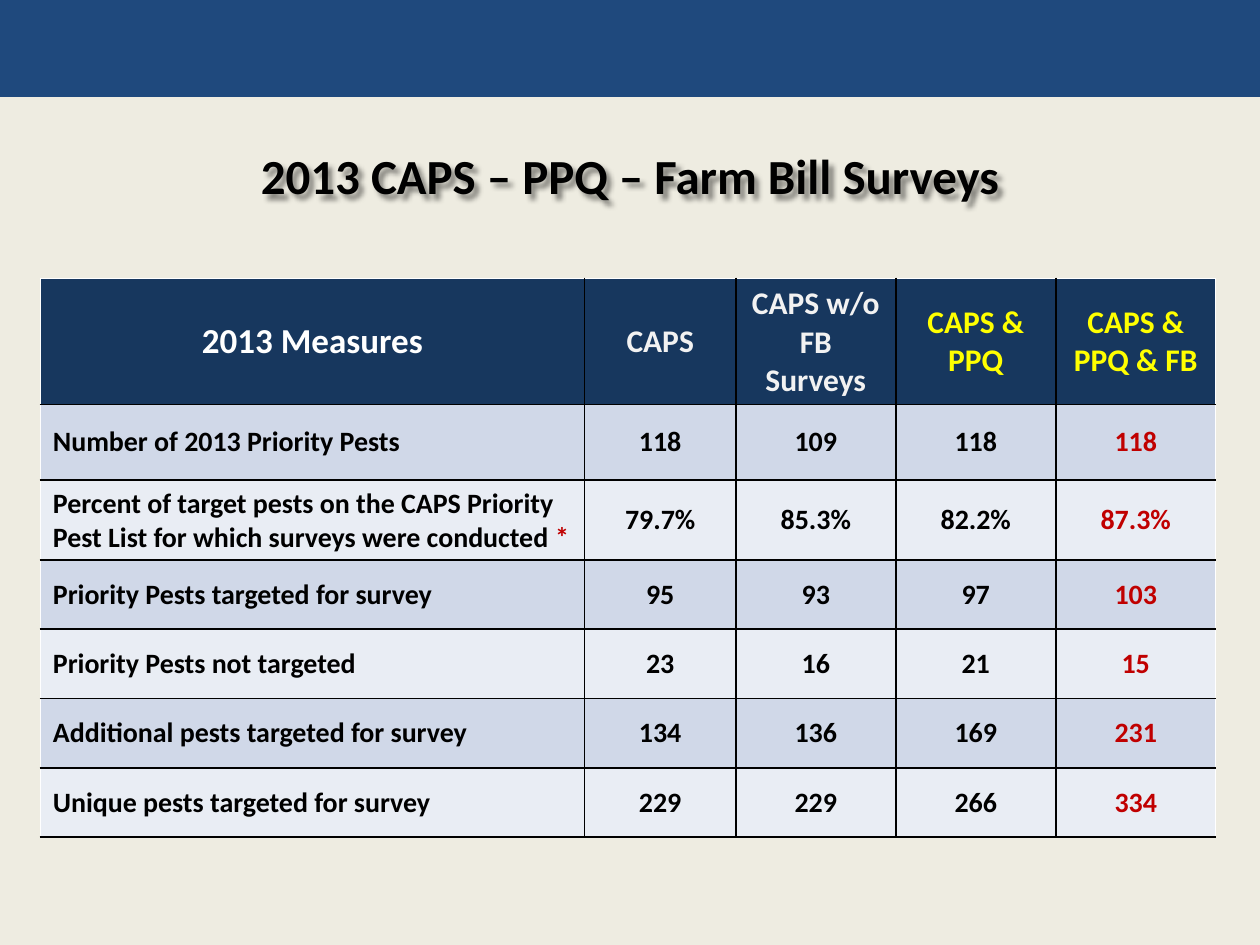
from lxml import etree
from pptx import Presentation
from pptx.dml.color import RGBColor
from pptx.enum.shapes import MSO_SHAPE
from pptx.enum.text import MSO_ANCHOR, PP_ALIGN
from pptx.oxml import parse_xml
from pptx.oxml.ns import nsdecls, qn
from pptx.util import Inches, Pt

RECTANGLE = MSO_SHAPE.RECTANGLE
MIDDLE = MSO_ANCHOR.MIDDLE
LEFT, CENTER = PP_ALIGN.LEFT, PP_ALIGN.CENTER

# Content
TITLE = "2013 CAPS – PPQ – Farm Bill Surveys"
HEADERS = ["2013 Measures", "CAPS", "CAPS w/o FB Surveys", "CAPS & PPQ", "CAPS & PPQ & FB"]
MEASURES = [
    ("Number of 2013 Priority Pests", "118", "109", "118", "118"),
    ("Percent of target pests on the CAPS Priority Pest List for which surveys were conducted *",
     "79.7%", "85.3%", "82.2%", "87.3%"),
    ("Priority Pests targeted for survey", "95", "93", "97", "103"),
    ("Priority Pests not targeted", "23", "16", "21", "15"),
    ("Additional pests targeted for survey", "134", "136", "169", "231"),
    ("Unique pests targeted for survey", "229", "229", "266", "334"),
]

# Style and grid, in inches
FONT = "Calibri"
BLACK, WHITE, RED = "000000", "FFFFFF", "C00000"
HEADER_FILL = "17375E"
HEADER_COLORS = [WHITE, "F2F2F2", "F2F2F2", "FFFF00", "FFFF00"]
BAND_FILLS = ["D0D8E8", "E9EDF4"]
WIDTH, HEIGHT = 10, 7.5
COLUMN_WIDTHS = [4.32, 1.2] + [1.27] * 3
ROW_HEIGHTS = [0.5, 0.6] + [0.55] * 5


def color(value):
    return RGBColor.from_string(value)


def style_font(font, size, value):
    font.name, font.size, font.bold = FONT, Pt(size), True
    font.color.rgb = color(value)


def set_borders(cell, **sides):
    properties = cell._tc.get_or_add_tcPr()
    for index, side in enumerate(("L", "R", "T", "B")):
        properties.insert(index, parse_xml(
            f'<a:ln{side} {nsdecls("a")} w="12700"><a:solidFill>'
            f'<a:srgbClr val="{sides.get(side, BLACK)}"/></a:solidFill></a:ln{side}>'))


def add_title(slide):
    box = slide.shapes.add_textbox(Inches(0.5), Inches(1), Inches(9), Inches(0.78))
    frame = box.text_frame
    frame.word_wrap = True
    frame.vertical_anchor = MIDDLE
    paragraph = frame.paragraphs[0]
    paragraph.text = TITLE
    paragraph.alignment = CENTER
    style_font(paragraph.font, 28, BLACK)
    # Soft shadow behind the letters
    effects = etree.SubElement(box._element.spPr, qn("a:effectLst"))
    effects.append(parse_xml(
        f'<a:outerShdw {nsdecls("a")} blurRad="38100" dist="38100" dir="2700000">'
        '<a:srgbClr val="000000"><a:alpha val="43000"/></a:srgbClr></a:outerShdw>'))


def fill_cell(cell, text, row, column):
    is_header, is_label = row == 0, column == 0
    last_column = len(HEADERS) - 1
    if is_header:
        fill, size, text_color = HEADER_FILL, 20 if is_label else 18, HEADER_COLORS[column]
    else:
        fill, size = BAND_FILLS[(row - 1) % 2], 16
        text_color = RED if column == last_column else BLACK
    cell.fill.solid()
    cell.fill.fore_color.rgb = color(fill)
    cell.vertical_anchor = MIDDLE
    if not is_header and not is_label:
        cell.margin_left = cell.margin_right = cell.margin_top = cell.margin_bottom = 0

    paragraph = cell.text_frame.paragraphs[0]
    paragraph.alignment = LEFT if is_label and not is_header else CENTER
    label, star, _ = text.partition("*")
    paragraph.add_run().text = label
    style_font(paragraph.font, size, text_color)
    if star:
        run = paragraph.add_run()
        run.text = star
        run.font.color.rgb = color(RED)

    set_borders(cell,
                L=WHITE if is_label else BLACK,
                R=WHITE if column == last_column else BLACK,
                T=WHITE if is_header else BLACK)


def add_measures_table(slide):
    rows = [HEADERS, *MEASURES]
    table = slide.shapes.add_table(
        len(rows), len(HEADERS), Inches(0.32), Inches(2.21),
        Inches(sum(COLUMN_WIDTHS)), Inches(sum(ROW_HEIGHTS))).table
    for column, width in zip(table.columns, COLUMN_WIDTHS):
        column.width = Inches(width)
    for row, height in zip(table.rows, ROW_HEIGHTS):
        row.height = Inches(height)
    for row, texts in enumerate(rows):
        for column, text in enumerate(texts):
            fill_cell(table.cell(row, column), text, row, column)


def main():
    presentation = Presentation()
    presentation.slide_width, presentation.slide_height = Inches(WIDTH), Inches(HEIGHT)
    slide = presentation.slides.add_slide(presentation.slide_layouts[6])
    slide.background.fill.solid()
    slide.background.fill.fore_color.rgb = color("EEECE1")

    # Top band
    band = slide.shapes.add_shape(RECTANGLE, 0, 0, Inches(WIDTH), Inches(0.77))
    band.shadow.inherit = False
    band.fill.solid()
    band.fill.fore_color.rgb = color("1F497D")
    band.line.fill.background()

    add_title(slide)
    add_measures_table(slide)
    presentation.save("out.pptx")


if __name__ == "__main__":
    main()
